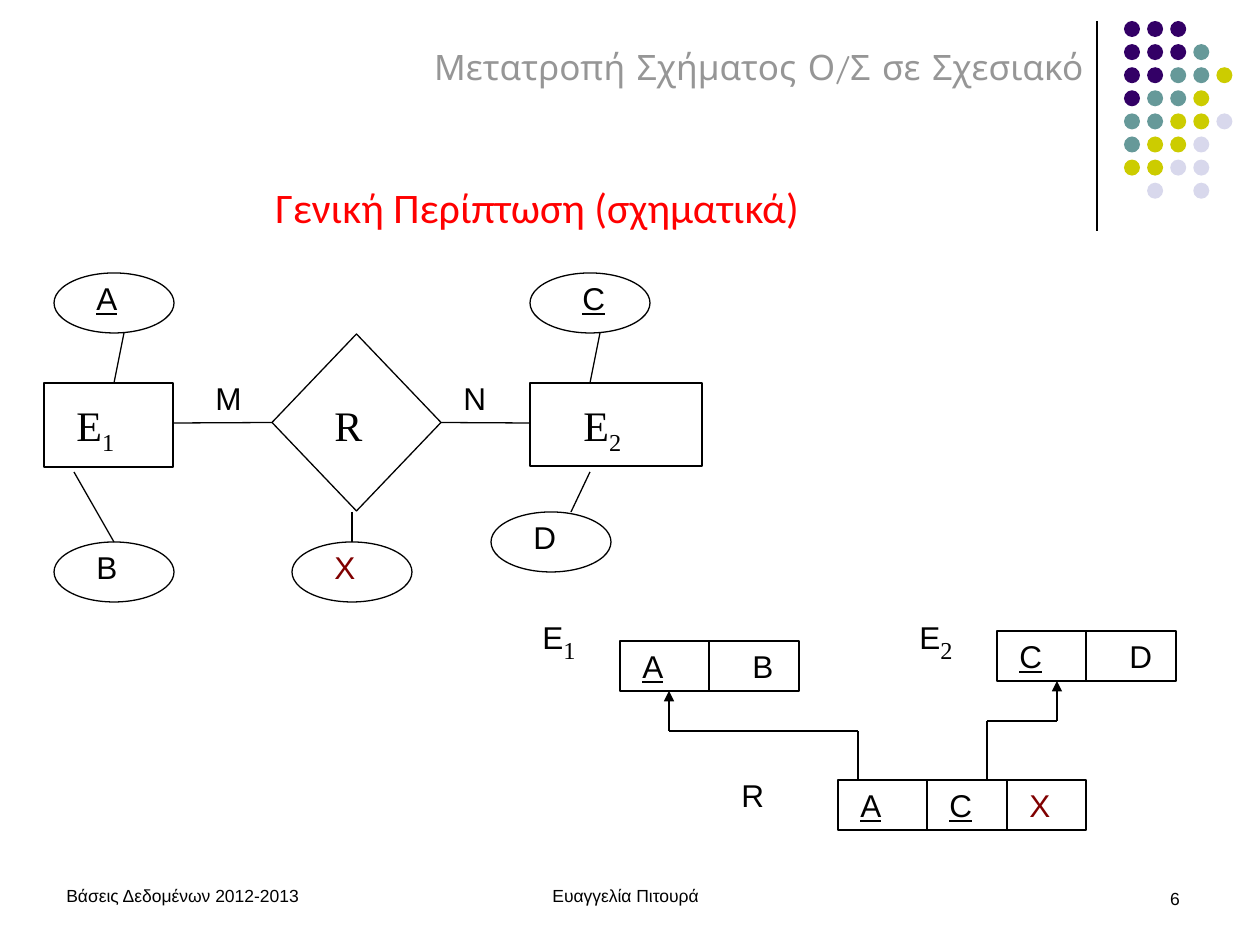
import pptx
import pptx.util
import pptx.dml.color
import pptx.enum.shapes
import pptx.enum.text
import lxml.etree

RGB = pptx.dml.color.RGBColor
KIND = pptx.enum.shapes.MSO_SHAPE
ALIGN = pptx.enum.text.PP_ALIGN
ANCHOR = pptx.enum.text.MSO_ANCHOR
A_NS = "{http://schemas.openxmlformats.org/drawingml/2006/main}"

BLACK = RGB(0, 0, 0)
GREY = RGB(0x96, 0x96, 0x96)
RED = RGB(0xFF, 0, 0)
MAROON = RGB(0x80, 0, 0)
PURPLE = RGB(0x33, 0, 0x66)
TEAL = RGB(0x66, 0x99, 0x99)
OLIVE = RGB(0xCC, 0xCC, 0)
PALE = RGB(0xD8, 0xD8, 0xEC)

SERIF = "Times New Roman"
LEFT, RIGHT = 1, 3


def px(n):
    return pptx.util.Emu(round(n * 914400 / 126))


class Board:
    font = "Arial"
    size = 18
    width = pptx.util.Pt(0.75)

    def __init__(self, slide):
        self.slide = slide

    def shape(self, kind, x, y, w, h, fill=None):
        item = self.slide.shapes.add_shape(kind, px(x), px(y), px(w), px(h))
        item.shadow.inherit = False
        if fill is None:
            item.fill.background()
            item.line.color.rgb = BLACK
            item.line.width = self.width
        else:
            item.fill.solid()
            item.fill.fore_color.rgb = fill
            item.line.fill.background()
        return item

    def line(self, x1, y1, x2, y2, arrow=False, start=None, end=None):
        """start and end are (shape, site) pairs to join."""
        item = self.slide.shapes.add_connector(
            pptx.enum.shapes.MSO_CONNECTOR.STRAIGHT, px(x1), px(y1), px(x2), px(y2))
        item.line.color.rgb = BLACK
        item.line.width = self.width
        if start:
            item.begin_connect(*start)
        if end:
            item.end_connect(*end)
        if arrow:
            lxml.etree.SubElement(item.line._get_or_add_ln(), A_NS + "tailEnd", type="triangle")
        lxml.etree.SubElement(item._element.spPr, A_NS + "effectLst")

    def text(self, words, x, y, w, h, size=None, font=None, color=BLACK, align=None,
             anchor=ANCHOR.TOP, under=None, sub=None, lead=0):
        box = self.slide.shapes.add_textbox(px(x), px(y), px(w), px(h))
        frame = box.text_frame
        frame.word_wrap = True
        frame.vertical_anchor = anchor
        para = frame.paragraphs[0]
        para.alignment = align
        para.space_before = pptx.util.Pt(lead)
        para.font.size = pptx.util.Pt(size or self.size)
        para.font.name = font or self.font
        para.font.color.rgb = color
        para.font.underline = under
        para.add_run().text = words
        if sub:
            low = para.add_run()
            low.text = sub
            low.font.size = pptx.util.Pt(24)
            low.font.name = SERIF
            low._r.get_or_add_rPr().set("baseline", "-25000")

    def label(self, words, x, y, w=100, **style):
        self.text(words, x, y, w, 50, lead=2, **style)

    def name(self, words, x, y, w, sub=None):
        self.text(words, x, y, w, 63, size=24, font=SERIF, sub=sub, lead=2)

    def oval(self, words, x, y, inset=30, **style):
        item = self.shape(KIND.OVAL, x, y, 120, 60)
        self.label(words, x + inset, y, 90, **style)
        return item

    def row(self, x, y, w, cuts, cells):
        """One relation: frame, dividers, then (words, offset, style) cells."""
        self.shape(KIND.RECTANGLE, x, y, w, 50)
        for cut in cuts:
            self.line(x + cut, y, x + cut, y + 50)
        for words, shift, style in cells:
            self.label(words, x + shift, y, 70, **style)

    def trail(self, *points):
        last = len(points) - 2
        for i, (a, b) in enumerate(zip(points, points[1:])):
            self.line(*a, *b, arrow=i == last)


def main():
    deck = pptx.Presentation()
    deck.slide_width, deck.slide_height = px(1260), px(945)
    board = Board(deck.slides.add_slide(deck.slide_layouts[6]))

    # Corner rule and dot pattern
    board.line(1097, 21, 1097, 231)
    tints = {"P": PURPLE, "T": TEAL, "O": OLIVE, "L": PALE}
    dots = ("PPP", "PPPT", "PPTTO", "PTTO", "TTOOL", "TOOL", "OOLL", " L L")
    for r, band in enumerate(dots):
        for c, key in enumerate(band):
            if key in tints:
                board.shape(KIND.OVAL, 1124 + 23.1 * c, 21 + 23.1 * r, 16, 16, tints[key])

    # Footer and headings
    board.text("Βάσεις Δεδομένων 2012-2013", 54, 879, 328, 40, size=10)
    board.text("Ευαγγελία Πιτουρά", 422, 879, 407, 28, size=10, align=ALIGN.CENTER)
    board.text("6", 898, 882, 294, 63, size=10, align=ALIGN.RIGHT)
    board.text("Μετατροπή Σχήματος Ο/Σ σε Σχεσιακό", 54, 35, 1042, 59, size=20,
               font="Comic Neue", color=GREY, align=ALIGN.RIGHT, anchor=ANCHOR.BOTTOM)
    board.text("Γενική Περίπτωση (σχηματικά)", 263, 175, 556, 63, size=24,
               font="Calibri", color=RED, lead=2)

    # Entities and relationship
    key = {"under": True}
    extra = {"color": MAROON}
    board.shape(KIND.FLOWCHART_PROCESS, 44, 383, 129, 84)
    board.shape(KIND.FLOWCHART_PROCESS, 530, 383, 172, 83)
    bond = board.shape(KIND.FLOWCHART_DECISION, 272, 334, 169, 177)
    board.name("E", 64, 393, 118, "1")
    board.name("R", 322, 393, 179)
    board.name("E", 571, 393, 139, "2")
    board.line(173, 423, 272, 423, end=(bond, LEFT))
    board.line(441, 423, 530, 423, start=(bond, RIGHT))
    board.label("M", 203, 373, 50)
    board.label("N", 451, 373, 70)

    # Attributes
    board.oval("A", 54, 273, **key)
    low = board.oval("B", 54, 542)
    board.oval("C", 530, 273, 40, **key)
    board.oval("D", 491, 512)
    mark = board.oval("X", 292, 542, **extra)
    board.line(124, 333, 114, 383)
    board.line(74, 472, 114, 542, end=(low, 0))
    board.line(600, 333, 590, 383)
    board.line(590, 472, 571, 512)
    board.line(352, 512, 352, 542, end=(mark, 0))

    # Relations
    board.label("E", 530, 601, 139, sub="1")
    board.row(620, 641, 179, [89], [("A", 10, key), ("B", 120, {})])
    board.label("E", 907, 601, 139, sub="2")
    board.row(997, 631, 179, [89], [("C", 10, key), ("D", 120, {})])
    board.label("R", 729, 770, 139)
    board.row(838, 780, 248, [89, 169],
              [("A", 10, key), ("C", 99, key), ("X", 179, extra)])

    # Foreign keys
    board.trail((858, 780), (858, 731), (669, 731), (669, 691))
    board.trail((987, 780), (987, 721), (1057, 721), (1057, 681))

    deck.save("out.pptx")


if __name__ == "__main__":
    main()
